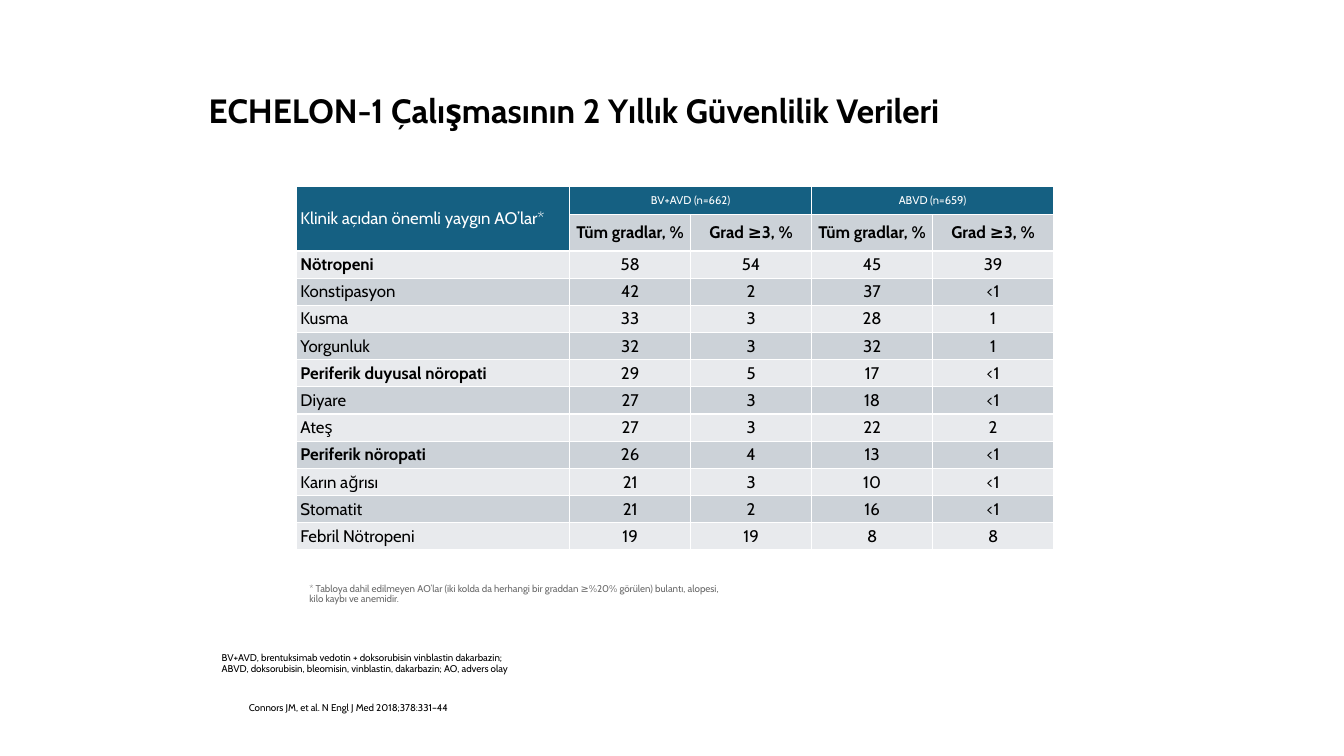
from lxml.etree import SubElement
from pptx import Presentation
from pptx.dml.color import RGBColor
from pptx.enum.text import MSO_ANCHOR, MSO_AUTO_SIZE, PP_ALIGN
from pptx.oxml.ns import qn
from pptx.util import Inches, Pt

# Content
TITLE = "ECHELON-1 Çalışmasının 2 Yıllık Güvenlilik Verileri"
CORNER = "Klinik açıdan önemli yaygın AO’lar*"
ARMS = ["BV+AVD (n=662)", "ABVD (n=659)"]
MEASURES = ["Tüm gradlar, %", "Grad ≥3, %"]
EVENTS = [
    ("Nötropeni", "58", "54", "45", "39"),
    ("Konstipasyon", "42", "2", "37", "<1"),
    ("Kusma", "33", "3", "28", "1"),
    ("Yorgunluk", "32", "3", "32", "1"),
    ("Periferik duyusal nöropati", "29", "5", "17", "<1"),
    ("Diyare", "27", "3", "18", "<1"),
    ("Ateş", "27", "3", "22", "2"),
    ("Periferik nöropati", "26", "4", "13", "<1"),
    ("Karın ağrısı", "21", "3", "10", "<1"),
    ("Stomatit", "21", "2", "16", "<1"),
    ("Febril Nötropeni", "19", "19", "8", "8"),
]
BOLD_EVENTS = {"Nötropeni", "Periferik duyusal nöropati", "Periferik nöropati"}
# Notes: text, box (left, top, width, height), anchor, alignment, colour
NOTES = [
    ("BV+AVD, brentuksimab vedotin + doksorubisin vinblastin dakarbazin;\v"
     "ABVD, doksorubisin, bleomisin, vinblastin, dakarbazin; AO, advers olay",
     (2.1, 6.47, 3.39, 0.27), MSO_ANCHOR.BOTTOM, PP_ALIGN.LEFT, "black"),
    ("Connors JM, et al. N Engl J Med 2018;378:331–44",
     (2.02, 6.74, 2.52, 0.39), MSO_ANCHOR.BOTTOM, PP_ALIGN.RIGHT, "black"),
    ("* Tabloya dahil edilmeyen AO’lar (iki kolda da herhangi bir graddan "
     "≥%20% görülen) bulantı, alopesi, kilo kaybı ve anemidir.",
     (2.97, 5.78, 4.38, 0.23), MSO_ANCHOR.MIDDLE, PP_ALIGN.LEFT, "grey"),
]

# Look and grid, in inches
COLORS = {"black": "000000", "white": "FFFFFF", "grey": "6A6A6A",
          "header": "156082", "dark": "CCD2D8", "light": "E8EAED"}
FONT = "Cabin"
TITLE_BOX = (1.97, 0.92, 8.99, 0.39)
TABLE_LEFT, TABLE_TOP = 2.94, 1.85
COLUMNS = [2.71] + [1.2] * len(ARMS) * len(MEASURES)
ROWS = [0.28, 0.36] + [0.27] * len(EVENTS)


def style(paragraph, size, color, bold=False, alignment=PP_ALIGN.LEFT):
    paragraph.alignment = alignment
    font = paragraph.font
    font.name, font.size, font.bold = FONT, Pt(size), bold
    font.color.rgb = RGBColor.from_string(COLORS[color])


def write_box(shape, text, box, anchor, *look):
    shape.left, shape.top, shape.width, shape.height = map(Inches, box)
    frame = shape.text_frame
    frame.word_wrap = True
    frame.auto_size = MSO_AUTO_SIZE.NONE
    frame.vertical_anchor = anchor
    paragraph = frame.paragraphs[0]
    paragraph.text = text
    paragraph.line_spacing = 0.9
    style(paragraph, *look)


def format_cell(cell, fill):
    cell.margin_left = cell.margin_right = Inches(0.04)
    cell.margin_top = cell.margin_bottom = Inches(0.02)
    cell.vertical_anchor = MSO_ANCHOR.MIDDLE
    properties = cell._tc.get_or_add_tcPr()
    for side in ("lnL", "lnR", "lnT", "lnB"):
        line = SubElement(properties, qn(f"a:{side}"), w=str(Pt(1)))
        SubElement(SubElement(line, qn("a:solidFill")), qn("a:srgbClr"),
                   val=COLORS["white"])
    cell.fill.solid()
    cell.fill.fore_color.rgb = RGBColor.from_string(COLORS[fill])


def add_safety_table(slide):
    table = slide.shapes.add_table(
        len(ROWS), len(COLUMNS), Inches(TABLE_LEFT), Inches(TABLE_TOP),
        Inches(sum(COLUMNS)), Inches(sum(ROWS))).table
    table.first_row = table.horz_banding = False
    for column, width in zip(table.columns, COLUMNS):
        column.width = Inches(width)
    for row, height in zip(table.rows, ROWS):
        row.height = Inches(height)

    # Header rows, with empty text in the cells that get merged
    arm_row = [CORNER]
    for arm in ARMS:
        arm_row += [arm] + [""] * (len(MEASURES) - 1)
    grid = [arm_row, [""] + MEASURES * len(ARMS)] + EVENTS

    for r, values in enumerate(grid):
        for c, value in enumerate(values):
            cell = table.cell(r, c)
            is_header = r == 0 or (r == 1 and c == 0)
            band = "dark" if r % 2 else "light"
            format_cell(cell, "header" if is_header else band)
            paragraph = cell.text_frame.paragraphs[0]
            paragraph.text = value
            style(paragraph, 8 if r == 0 and c else 12,
                  "white" if is_header else "black",
                  bold=(r == 1 and c > 0) or value in BOLD_EVENTS,
                  alignment=PP_ALIGN.CENTER if c else PP_ALIGN.LEFT)

    table.cell(0, 0).merge(table.cell(1, 0))
    span = len(MEASURES)
    for first in range(1, len(COLUMNS), span):
        table.cell(0, first).merge(table.cell(0, first + span - 1))


def main():
    presentation = Presentation()
    presentation.slide_width = Inches(13.33)
    presentation.slide_height = Inches(7.5)
    slide = presentation.slides.add_slide(presentation.slide_layouts[5])

    # Title, notes and table
    write_box(slide.shapes.title, TITLE, TITLE_BOX, MSO_ANCHOR.MIDDLE,
              24, "black", True)
    for text, box, anchor, alignment, color in NOTES:
        note = slide.shapes.add_textbox(0, 0, 0, 0)
        write_box(note, text, box, anchor, 7, color, False, alignment)
    add_safety_table(slide)
    presentation.save("out.pptx")


if __name__ == "__main__":
    main()
